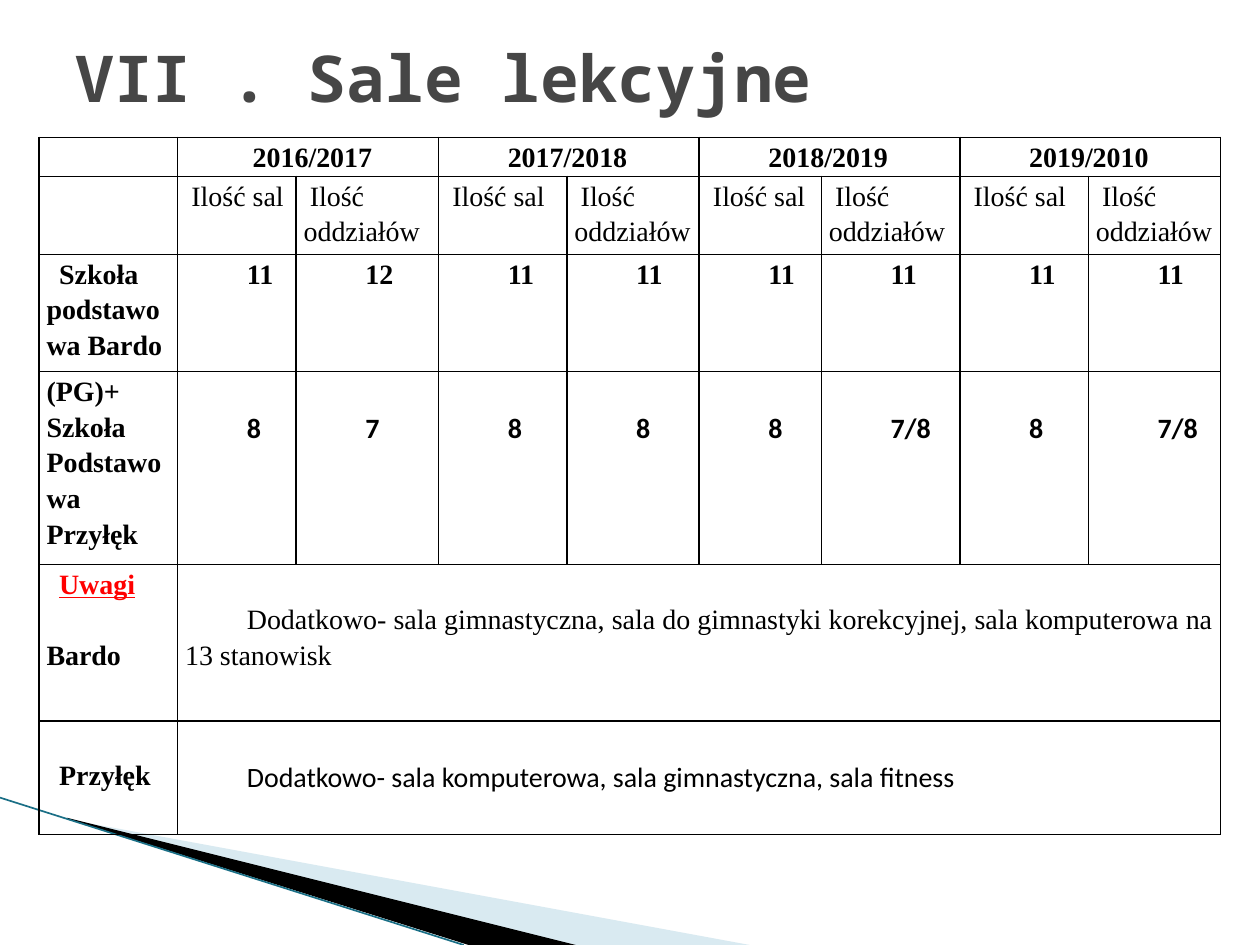
from dataclasses import dataclass

from lxml.etree import SubElement
from pptx import Presentation
from pptx.dml.color import RGBColor
from pptx.enum.shapes import MSO_CONNECTOR as Connector
from pptx.enum.text import MSO_ANCHOR as Anchor, PP_ALIGN as Align
from pptx.oxml.ns import qn
from pptx.slide import Slide
from pptx.util import Pt

BLACK, RED, GREY = "000000", "FF0000", "464646"
SERIF, SANS, MONO = "Times New Roman", "Calibri", "Noto Sans Mono"
NUMBER_INDENT, LABEL_INDENT, HEADING_INDENT = 35.3, 7.2, 3.6
ONE_LINE = 20

YEARS = ["2016/2017", "2017/2018", "2018/2019", "2019/2010"]
BARDO = [11, 12, 11, 11, 11, 11, 11, 11]
PRZYLEK = ["8", "7", "8", "8", "8", "7/8", "8", "7/8"]
COLUMNS = [79.2, 67.7, 81.4, 73.4, 75.6, 69.8, 79.2, 73.4, 75.6]
ROWS = [22.3, 44.6, 67, 89.3, 89.3, 64.8]


def color(value):
    return RGBColor.from_string(value)


def set_all(target, values):
    for name, value in values.items():
        setattr(target, name, value)


@dataclass
class SlideBuilder:
    slide: Slide
    font: str = SERIF
    size: float = 16
    border: float = 1

    def styled_run(self, paragraph, text, ink=BLACK, **values):
        run = paragraph.add_run()
        run.text = str(text)
        set_all(run.font, {"name": self.font, "size": Pt(self.size), "bold": True, **values})
        run.font.color.rgb = color(ink)

    def title(self, text, left, top, width, height):
        box = self.slide.shapes.add_textbox(Pt(left), Pt(top), Pt(width), Pt(height))
        set_all(box.text_frame, {"word_wrap": True, "margin_top": 0, "vertical_anchor": Anchor.TOP})
        self.styled_run(box.text_frame.paragraphs[0], text, GREY, name=MONO, size=Pt(36.9))

    def wedge(self, points, fill, opacity=100):
        start, *rest = [(Pt(x), Pt(y)) for x, y in points]
        builder = self.slide.shapes.build_freeform(*start)
        builder.add_line_segments(rest)
        shape = builder.convert_to_shape()
        shape.shadow.inherit = False
        shape.line.fill.background()
        shape.fill.solid()
        shape.fill.fore_color.rgb = color(fill)
        if opacity < 100:
            tone = shape._element.spPr.find(qn("a:solidFill")).find(qn("a:srgbClr"))
            SubElement(tone, qn("a:alpha"), val=str(opacity * 1000))

    def line(self, start, end, ink, width):
        ends = [Pt(value) for value in (*start, *end)]
        connector = self.slide.shapes.add_connector(Connector.STRAIGHT, *ends)
        connector.line.color.rgb = color(ink)
        connector.line.width = Pt(width)
        SubElement(connector._element.spPr, qn("a:effectLst"))

    def table(self, left, top, columns, rows):
        frame = self.slide.shapes.add_table(len(rows), len(columns), Pt(left), Pt(top),
                                            Pt(sum(columns)), Pt(sum(rows)))
        table = frame.table
        set_all(table, {"first_row": False, "horz_banding": False})
        for column, width in zip(table.columns, columns):
            column.width = Pt(width)
        for row, height in zip(table.rows, rows):
            row.height = Pt(height)
        for cell in table.iter_cells():
            set_all(cell, {"margin_left": Pt(4.3), "margin_right": Pt(4.3),
                           "margin_top": 0, "margin_bottom": 0})
            self.outline(cell)
            cell.fill.background()
        return table

    def outline(self, cell):
        properties = cell._tc.get_or_add_tcPr()
        for side in ("lnL", "lnR", "lnT", "lnB"):
            edge = SubElement(properties, qn(f"a:{side}"), w=str(Pt(self.border)))
            SubElement(SubElement(edge, qn("a:solidFill")), qn("a:srgbClr"), val=BLACK)

    def cell_text(self, cell, text, indent=0, top=0, **values):
        """Add a paragraph to a cell; top is the gap above it."""
        paragraph = cell.text_frame.paragraphs[0]
        if paragraph.runs:
            paragraph = cell.text_frame.add_paragraph()
            paragraph.space_before = Pt(top)
        else:
            cell.margin_top = Pt(top)
        set_all(paragraph, {"alignment": Align.JUSTIFY, "line_spacing": 1.15})
        properties = paragraph._p.get_or_add_pPr()
        properties.set("marL", "0")
        properties.set("indent", str(Pt(indent)))
        self.styled_run(paragraph, text, **values)


def fill_table(builder, table):
    cell, add = table.cell, builder.cell_text
    for index, year in enumerate(YEARS):
        column = 1 + 2 * index
        cell(0, column).merge(cell(0, column + 1))
        add(cell(0, column), year, NUMBER_INDENT if index else 38.6)
        add(cell(1, column), "Ilość sal", HEADING_INDENT, bold=False)
        add(cell(1, column + 1), "Ilość oddziałów", HEADING_INDENT, bold=False)

    add(cell(2, 0), "Szkoła podstawowa Bardo", LABEL_INDENT)
    add(cell(3, 0), "(PG)+ Szkoła Podstawowa Przyłęk")
    for column, (bardo, przylek) in enumerate(zip(BARDO, PRZYLEK), start=1):
        add(cell(2, column), bardo, NUMBER_INDENT)
        add(cell(3, column), przylek, NUMBER_INDENT, ONE_LINE, name=SANS)

    add(cell(4, 0), "Uwagi", LABEL_INDENT, ink=RED, underline=True)
    add(cell(4, 0), "Bardo", top=ONE_LINE)
    add(cell(5, 0), "Przyłęk", LABEL_INDENT, ONE_LINE)
    remarks = [
        ("Dodatkowo- sala gimnastyczna, sala do gimnastyki korekcyjnej, "
         "sala komputerowa na 13 stanowisk", SERIF),
        ("Dodatkowo- sala komputerowa, sala gimnastyczna, sala fitness", SANS),
    ]
    for row, (remark, font) in enumerate(remarks, start=4):
        cell(row, 1).merge(cell(row, 8))
        add(cell(row, 1), remark, NUMBER_INDENT, ONE_LINE, name=font, bold=False)


def main():
    presentation = Presentation()
    presentation.slide_width, presentation.slide_height = Pt(720), Pt(540)
    slide = presentation.slides.add_slide(presentation.slide_layouts[6])
    builder = SlideBuilder(slide)

    builder.wedge([(39.6, 468.4), (428.4, 540), (328.3, 540), (39.6, 468)], "A0CBDC", 40)
    builder.wedge([(38.2, 467.3), (329, 540), (267.8, 540), (38.9, 468)], BLACK)
    builder.line((0, 455.8), (265, 540), "1A6F86", 0.95)
    builder.title("VII . Sale lekcyjne", 36, 21.6, 648, 90)
    fill_table(builder, builder.table(22.3, 78.5, COLUMNS, ROWS))
    presentation.save("out.pptx")


if __name__ == "__main__":
    main()
